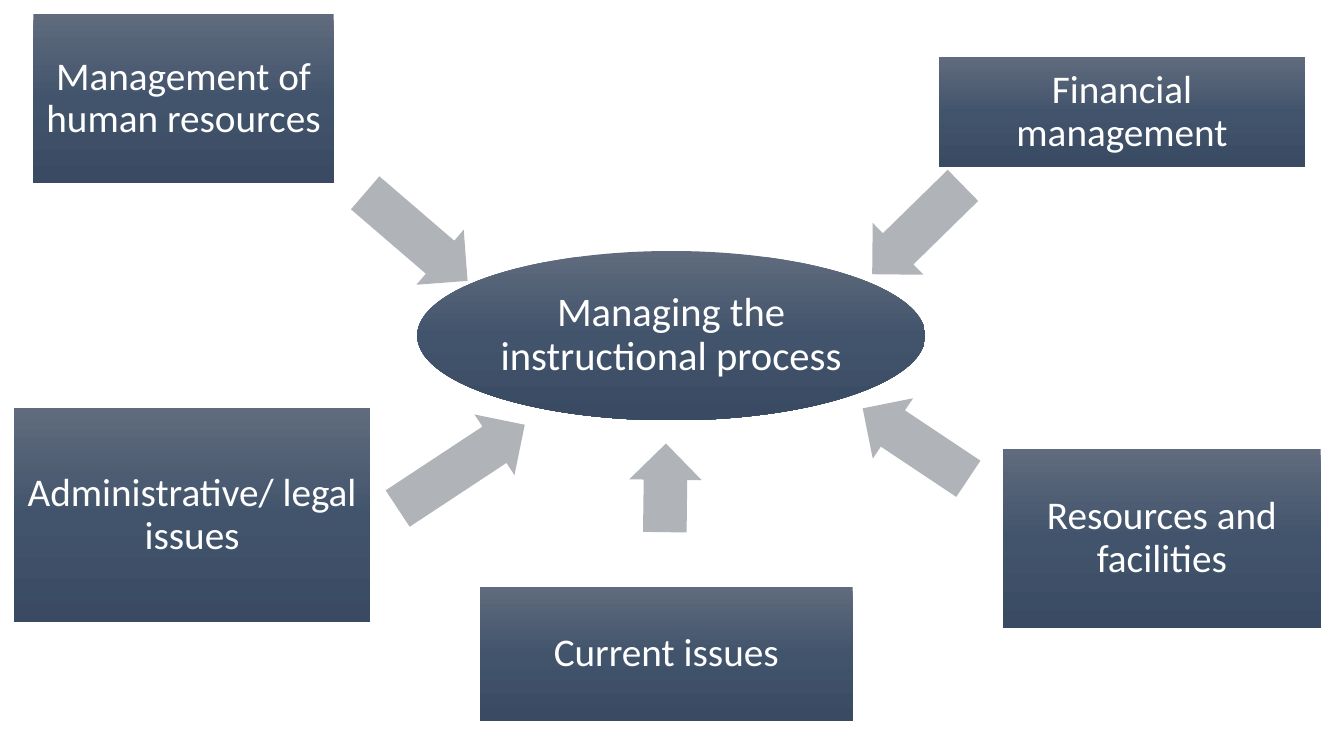
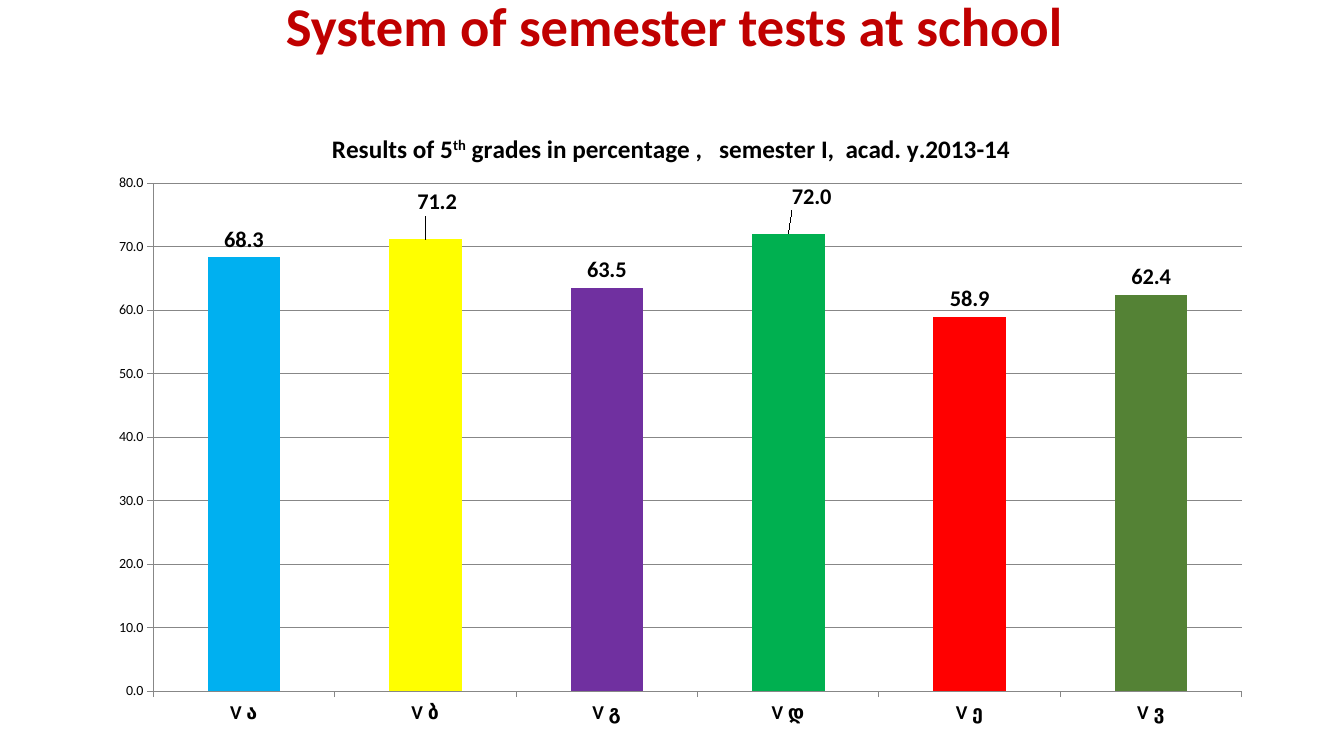
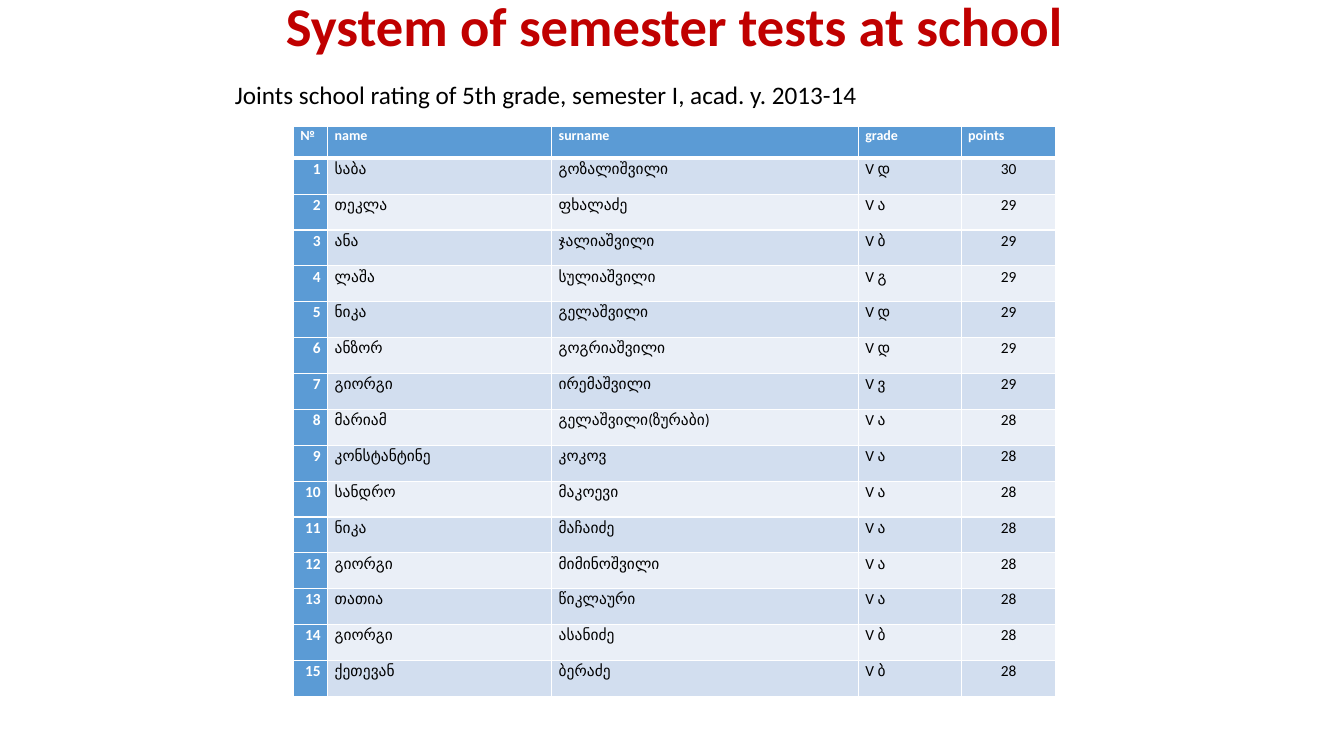
"""Build three slides on managing a school and its semester tests."""
from copy import deepcopy
from dataclasses import dataclass

from lxml import etree
from pptx import Presentation
from pptx.chart.data import CategoryChartData
from pptx.dml.color import RGBColor
from pptx.enum import chart as charts, shapes, text
from pptx.oxml import ns
from pptx import util as u

FONT = "Calibri"
WHITE = RGBColor(0xFF, 0xFF, 0xFF)
BLACK = RGBColor(0x00, 0x00, 0x00)
TITLE_RED = RGBColor(0xC0, 0x00, 0x00)
ARROW_GREY = RGBColor(0xB0, 0xB4, 0xB9)
AXIS_GREY = RGBColor(0x87, 0x87, 0x87)
HEADER_BLUE = RGBColor(0x5B, 0x9B, 0xD5)
ROW_BANDS = (RGBColor(0xD2, 0xDE, 0xEF), RGBColor(0xEA, 0xEF, 0xF7))
SLATE_STOPS = (
    RGBColor(0x60, 0x6B, 0x7D),
    RGBColor(0x42, 0x54, 0x6C),
    RGBColor(0x39, 0x4A, 0x62),
)

TESTS_TITLE = "System of semester tests at school"
TOPICS = (
    ("Financial management", (69.83, 7.6, 27.3, 14.53), (68.27, 30.4), 9.45, 135.6),
    ("Resources and facilities", (74.63, 59.33, 23.63, 23.73), (68.12, 58.67), 9.45, 213.7),
    ("Current issues", (35.7, 77.6, 27.75, 17.73), (49.51, 64.53), 6.6, 270.7),
    ("Administrative/ legal issues", (1.05, 54, 26.48, 28.27), (34.32, 61.73), 11.33, 326.6),
    ("Management of human resources", (2.48, 1.87, 22.35, 22.4), (30.98, 31.33), 10.05, 40.7),
)
CLASS_RESULTS = (
    ("V ა", 68.3, RGBColor(0x00, 0xB0, 0xF0)),
    ("V ბ", 71.2, RGBColor(0xFF, 0xFF, 0x00)),
    ("V გ", 63.5, RGBColor(0x70, 0x30, 0xA0)),
    ("V დ", 72, RGBColor(0x00, 0xB0, 0x50)),
    ("V ე", 58.9, RGBColor(0xFF, 0x00, 0x00)),
    ("V ვ", 62.4, RGBColor(0x54, 0x82, 0x35)),
)
RAISED_LABELS = {1: (0.01, -0.03), 3: (0.02, -0.03)}
RATING_COLUMNS = (
    ("№", 4.5),
    ("name", 29.37),
    ("surname", 40.2),
    ("grade", 13.5),
    ("points", 12.43),
)
RATING = (
    ("საბა", "გოზალიშვილი", "V დ", 30),
    ("თეკლა", "ფხალაძე", "V ა", 29),
    ("ანა", "ჯალიაშვილი", "V ბ", 29),
    ("ლაშა", "სულიაშვილი", "V გ", 29),
    ("ნიკა", "გელაშვილი", "V დ", 29),
    ("ანზორ", "გოგრიაშვილი", "V დ", 29),
    ("გიორგი", "ირემაშვილი", "V ვ", 29),
    ("მარიამ", "გელაშვილი(ზურაბი)", "V ა", 28),
    ("კონსტანტინე", "კოკოვ", "V ა", 28),
    ("სანდრო", "მაკოევი", "V ა", 28),
    ("ნიკა", "მაჩაიძე", "V ა", 28),
    ("გიორგი", "მიმინოშვილი", "V ა", 28),
    ("თათია", "წიკლაური", "V ა", 28),
    ("გიორგი", "ასანიძე", "V ბ", 28),
    ("ქეთევან", "ბერაძე", "V ბ", 28),
)


@dataclass(frozen=True)
class Box:
    """A rectangle in EMU whose regions are given as percentages of it."""

    left: int
    top: int
    width: int
    height: int

    def across(self, share):
        """Return a percentage of the width."""
        return round(self.width * share / 100)

    def down(self, share):
        """Return a percentage of the height."""
        return round(self.height * share / 100)

    def region(self, left, top, width, height):
        """Return the box at the given percentages."""
        return Box(self.left + self.across(left), self.top + self.down(top),
                   self.across(width), self.down(height))

    @property
    def place(self):
        """Return left, top, width and height for a shape call."""
        return self.left, self.top, self.width, self.height


SLIDE = Box(0, 0, u.Inches(13.33), u.Inches(7.5))


def style_font(font, size, color=BLACK, bold=False):
    """Set the shared typeface with a size, colour and weight."""
    font.name, font.size, font.bold = FONT, u.Pt(size), bold
    font.color.rgb = color


def write(paragraph, words, size, color=BLACK, bold=False, align=None, spacing=None):
    """Fill one paragraph with evenly styled text."""
    paragraph.text = words
    paragraph.alignment, paragraph.line_spacing = align, spacing
    style_font(paragraph.font, size, color, bold)


def add_title(slide, box):
    """Place the red heading of the test slides."""
    frame = slide.shapes.add_textbox(*box.place).text_frame
    frame.word_wrap = True
    write(frame.paragraphs[0], TESTS_TITLE, 39, TITLE_RED, True, text.PP_ALIGN.CENTER, 0.8)


def add_subtitle(slide, box, words):
    """Place a plain line above the table."""
    frame = slide.shapes.add_textbox(*box.place).text_frame
    frame.word_wrap = True
    frame.margin_left = box.across(1.55)
    write(frame.paragraphs[0], words, 18)


def add_topic(slide, box, kind, words, size):
    """Place one slate gradient shape with its centred label."""
    topic = slide.shapes.add_shape(kind, *box.place)
    topic.shadow.inherit = False
    topic.line.fill.background()
    topic.fill.gradient()
    topic.fill.gradient_angle = 270
    stops = next(topic._element.iter(ns.qn("a:gsLst")))
    stops.append(deepcopy(stops[0]))
    for step, (stop, color) in enumerate(zip(topic.fill.gradient_stops, SLATE_STOPS)):
        stop.color.rgb, stop.position = color, step / 2
    frame = topic.text_frame
    frame.word_wrap, frame.vertical_anchor = True, text.MSO_ANCHOR.MIDDLE
    frame.margin_left = frame.margin_right = u.Inches(0.04)
    frame.margin_top = frame.margin_bottom = u.Inches(0.04)
    write(frame.paragraphs[0], words, size, WHITE, align=text.PP_ALIGN.CENTER, spacing=0.9)


def add_arrow(slide, box, center, length, angle):
    """Place a grey block arrow by its centre, length and direction."""
    thickness = 9.6
    spot = box.region(center[0] - length / 2, center[1] - thickness / 2, length, thickness)
    arrow = slide.shapes.add_shape(shapes.MSO_SHAPE.RIGHT_ARROW, *spot.place)
    arrow.adjustments[0], arrow.adjustments[1] = 0.6, 0.5
    arrow.rotation = angle
    arrow.shadow.inherit = False
    arrow.fill.solid()
    arrow.fill.fore_color.rgb = ARROW_GREY
    arrow.line.fill.background()


def add_process_diagram(slide, box):
    """Place the central process and the topics that feed it."""
    add_topic(slide, box.region(31.05, 33.2, 37.8, 22.4), shapes.MSO_SHAPE.OVAL,
              "Managing the instructional process", 29)
    for words, area, center, length, angle in TOPICS:
        add_arrow(slide, box, center, length, angle)
        add_topic(slide, box.region(*area), shapes.MSO_SHAPE.RECTANGLE, words, 28)


def set_layout(parent, index, **shares):
    """Give a chart element a manual layout at the given child index."""
    for old in parent.findall(ns.qn("c:layout")):
        parent.remove(old)
    layout = etree.Element(ns.qn("c:layout"))
    manual = etree.SubElement(layout, ns.qn("c:manualLayout"))
    for tag, value in shares.items():
        etree.SubElement(manual, ns.qn(f"c:{tag}")).set("val", str(value))
    parent.insert(index, layout)


def add_chart_title(chart):
    """Write the chart heading with its raised ordinal."""
    title = chart.chart_title
    heading = title.text_frame.paragraphs[0]
    style_font(heading.font, 18, bold=True)
    for words in ("Results of 5", "th",
                  " grades in percentage ,   semester I,  acad. y.2013-14"):
        heading.add_run().text = words
    heading.runs[1].font._element.set("baseline", "30000")
    set_layout(title._element, 1, xMode="edge", yMode="edge", x=0.2, y=0.04)


def style_axes(chart):
    """Set the scales, lines and fonts of both axes."""
    values, classes = chart.value_axis, chart.category_axis
    values.minimum_scale, values.maximum_scale, values.major_unit = 0, 80, 10
    values.tick_labels.number_format = "0.0"
    values.tick_labels.number_format_is_linked = False
    style_font(values.tick_labels.font, 10)
    style_font(classes.tick_labels.font, 14, bold=True)
    for line in (values.format.line, classes.format.line, values.major_gridlines.format.line):
        line.color.rgb, line.width = AXIS_GREY, u.Pt(0.75)


def add_results_chart(slide, box):
    """Place the column chart of class results."""
    names, scores, colors = zip(*CLASS_RESULTS)
    results = CategoryChartData(number_format="0.0")
    results.categories = names
    results.add_series("Series 1", scores)
    chart = slide.shapes.add_chart(
        charts.XL_CHART_TYPE.COLUMN_CLUSTERED, *box.place, results).chart
    style_font(chart.font, 10)
    chart.has_legend = False
    add_chart_title(chart)
    style_axes(chart)
    plot = chart.plots[0]
    plot.gap_width, plot.vary_by_categories = 150, False
    series = plot.series[0]
    series.format.fill.solid()
    series.format.fill.fore_color.rgb = HEADER_BLUE
    labels = series.data_labels
    labels.show_value, labels.position = True, charts.XL_LABEL_POSITION.OUTSIDE_END
    labels.number_format, labels.number_format_is_linked = "0.0", False
    style_font(labels.font, 16, bold=True)
    for index, color in enumerate(colors):
        bar = series.points[index].format.fill
        bar.solid()
        bar.fore_color.rgb = color
    for index, (x, y) in RAISED_LABELS.items():
        label = series.points[index].data_label
        label.position = charts.XL_LABEL_POSITION.OUTSIDE_END
        style_font(label.font, 16, bold=True)
        set_layout(labels._element.findall(ns.qn("c:dLbl"))[-1], 1, x=x, y=y)
    set_layout(chart._chartSpace.chart.plotArea, 0, layoutTarget="inner", xMode="edge",
               yMode="edge", x=0.05, y=0.125, w=0.93, h=0.8)


def set_borders(cell, **points):
    """Draw white borders of the given widths around a cell."""
    properties = cell._tc.get_or_add_tcPr()
    for side in "LRTB":
        width = u.Pt(points.get(side, 1))
        line = etree.SubElement(properties, ns.qn(f"a:ln{side}"), w=str(width))
        fill = etree.SubElement(line, ns.qn("a:solidFill"))
        etree.SubElement(fill, ns.qn("a:srgbClr"), val=str(WHITE))


def fill_cell(cell, words, row, column):
    """Write and style one cell by its place in the rating."""
    heading = row == 0
    strong = heading or column == 0
    cell.margin_left = cell.margin_right = u.Inches(0.07)
    cell.margin_top = cell.margin_bottom = 0
    if row < 2:
        set_borders(cell, **{"B" if heading else "T": 3})
    else:
        set_borders(cell)
    cell.fill.solid()
    cell.fill.fore_color.rgb = HEADER_BLUE if strong else ROW_BANDS[(row - 1) % 2]
    aligned = {0: text.PP_ALIGN.RIGHT, 4: text.PP_ALIGN.CENTER}
    write(cell.text_frame.paragraphs[0], str(words), 10 if heading else 11,
          WHITE if strong else BLACK, strong, None if heading else aligned.get(column), 1.07)


def add_rating_table(slide, box):
    """Place the numbered rating of pupils."""
    headings, widths = zip(*RATING_COLUMNS)
    rows = [headings] + [(rank, *pupil) for rank, pupil in enumerate(RATING, 1)]
    table = slide.shapes.add_table(len(rows), len(widths), *box.place).table
    for column, width in zip(table.columns, widths):
        column.width = box.across(width)
    for row, entries in enumerate(rows):
        table.rows[row].height = box.down(6.29 if row else 5.65)
        for column, words in enumerate(entries):
            fill_cell(table.cell(row, column), words, row, column)


def main():
    """Build and save the presentation."""
    deck = Presentation()
    deck.slide_width, deck.slide_height = SLIDE.width, SLIDE.height
    process, results, rating = (deck.slides.add_slide(deck.slide_layouts[6]) for _ in range(3))
    add_process_diagram(process, SLIDE)
    add_results_chart(results, SLIDE.region(7.05, 13.73, 87.1, 84))
    for slide in (results, rating):
        add_title(slide, SLIDE.region(7.05, 0, 86.25, 8.5))
    add_rating_table(rating, SLIDE.region(21.83, 16.67, 56.75, 75.5))
    add_subtitle(rating, SLIDE.region(16.35, 9.87, 72.6, 5.33),
                 "Joints school rating of 5th grade, semester I, acad. y. 2013-14")
    deck.save("out.pptx")


if __name__ == "__main__":
    main()
